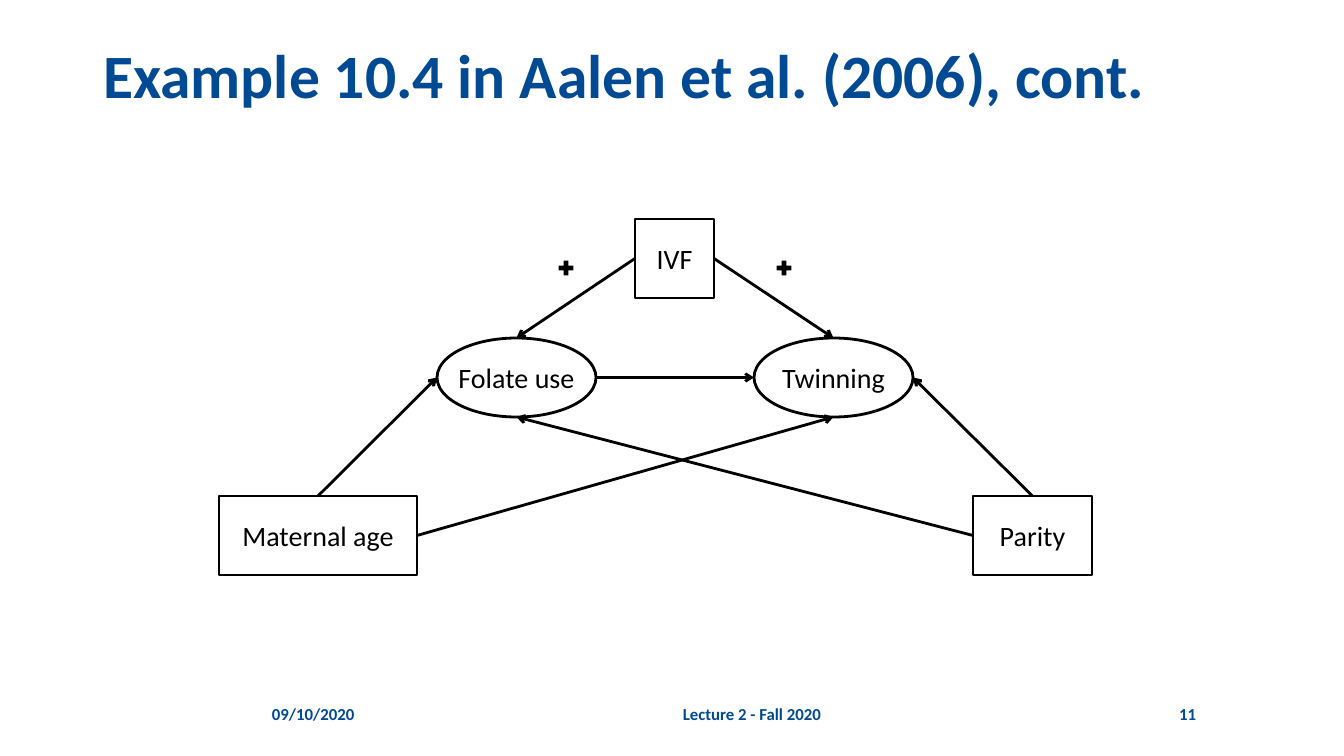
from lxml.etree import SubElement
from pptx import Presentation
from pptx.dml.color import RGBColor
from pptx.enum.shapes import MSO_CONNECTOR, MSO_SHAPE
from pptx.enum.text import MSO_ANCHOR, PP_ALIGN
from pptx.oxml.ns import qn
from pptx.util import Pt

EMU_PER_PX = 914400 / 100.8
COLORS = {"blue": "004A93", "black": "000000"}
TOP, LEFT, BOTTOM, RIGHT = range(4)


def px(*lengths):
    """Turn pixel lengths into EMU."""
    return [round(length * EMU_PER_PX) for length in lengths]


def color(name):
    """Return the named colour."""
    return RGBColor.from_string(COLORS[name])


class DiagramSlide:
    """Holds the style and the slide, and draws each kind of element."""

    font_name = "Calibri"
    line_width = Pt(2)

    def __init__(self, presentation):
        """Add a title-only slide."""
        self.slide = presentation.slides.add_slide(presentation.slide_layouts[5])
        self.shapes = self.slide.shapes

    def set_text(self, shape, text, size, color_name, align, anchor, bold=False, wrap=True):
        """Put one styled paragraph in a shape."""
        frame = shape.text_frame
        frame.text = text
        frame.word_wrap = wrap
        frame.vertical_anchor = anchor
        paragraph = frame.paragraphs[0]
        paragraph.alignment = align
        font = paragraph.font
        font.name, font.size, font.bold = self.font_name, Pt(size), bold
        font.color.rgb = color(color_name)
        return paragraph

    def title(self, text, *box):
        """Place and fill the title placeholder."""
        shape = self.shapes.title
        shape.left, shape.top, shape.width, shape.height = px(*box)
        paragraph = self.set_text(shape, text, 44, "blue", PP_ALIGN.LEFT, MSO_ANCHOR.TOP, bold=True)
        paragraph.line_spacing = 0.9

    def footer(self, text, left, width, align):
        """Add one text of the footer row."""
        shape = self.shapes.add_textbox(*px(left, 694, width, 40))
        self.set_text(shape, text, 12, "blue", align, MSO_ANCHOR.MIDDLE, bold=True)

    def node(self, kind, text, left, top, width):
        """Add an outlined, labelled node."""
        shape = self.shapes.add_shape(kind, *px(left, top, width, 79))
        shape.shadow.inherit = False
        shape.fill.background()
        shape.line.color.rgb = color("black")
        shape.line.width = self.line_width
        self.set_text(shape, text, 20, "black", PP_ALIGN.CENTER, MSO_ANCHOR.MIDDLE, wrap=False)
        return shape

    def plus(self, left):
        """Add a plus sign beside an arrow."""
        shape = self.shapes.add_shape(MSO_SHAPE.MATH_PLUS, *px(left, 258, 20, 20))
        shape.shadow.inherit = False
        shape.fill.solid()
        shape.fill.fore_color.rgb = color("black")
        shape.line.fill.background()

    def side(self, shape, side):
        """Return the middle of a side of a shape."""
        across = {LEFT: 0, RIGHT: shape.width}.get(side, shape.width // 2)
        down = {TOP: 0, BOTTOM: shape.height}.get(side, shape.height // 2)
        return shape.left + across, shape.top + down

    def arrow(self, source, source_side, target, target_side):
        """Draw an arrow between two sides, joined where it leaves a rectangle."""
        connector = self.shapes.add_connector(
            MSO_CONNECTOR.STRAIGHT,
            *self.side(source, source_side),
            *self.side(target, target_side),
        )
        if source.auto_shape_type == MSO_SHAPE.RECTANGLE:
            connector.begin_connect(source, source_side)
        connector.line.color.rgb = color("black")
        connector.line.width = self.line_width
        properties = connector._element.spPr
        SubElement(properties.find(qn("a:ln")), qn("a:tailEnd"), type="arrow")
        SubElement(properties, qn("a:effectLst"))


def main():
    """Build the slide and save it."""
    presentation = Presentation()
    presentation.slide_width, presentation.slide_height = px(1344, 756)
    diagram = DiagramSlide(presentation)

    diagram.title("Example 10.4 in Aalen et al. (2006), cont.", 93, 40, 1159, 146)
    diagram.footer("09/10/2020", 262, 132, PP_ALIGN.LEFT)
    diagram.footer("Lecture 2 - Fall 2020", 410, 684, PP_ALIGN.CENTER)
    diagram.footer("11", 1111, 95, PP_ALIGN.RIGHT)

    folate = diagram.node(MSO_SHAPE.OVAL, "Folate use", 437, 338, 159)
    twinning = diagram.node(MSO_SHAPE.OVAL, "Twinning", 754, 338, 159)
    age = diagram.node(MSO_SHAPE.RECTANGLE, "Maternal age", 219, 496, 198)
    parity = diagram.node(MSO_SHAPE.RECTANGLE, "Parity", 973, 496, 119)
    ivf = diagram.node(MSO_SHAPE.RECTANGLE, "IVF", 635, 219, 79)

    for source, source_side, target, target_side in (
        (folate, RIGHT, twinning, LEFT),
        (age, TOP, folate, LEFT),
        (age, RIGHT, twinning, BOTTOM),
        (parity, LEFT, folate, BOTTOM),
        (parity, TOP, twinning, RIGHT),
        (ivf, LEFT, folate, TOP),
        (ivf, RIGHT, twinning, TOP),
    ):
        diagram.arrow(source, source_side, target, target_side)

    for left in (556, 774):
        diagram.plus(left)

    presentation.save("out.pptx")


if __name__ == "__main__":
    main()
